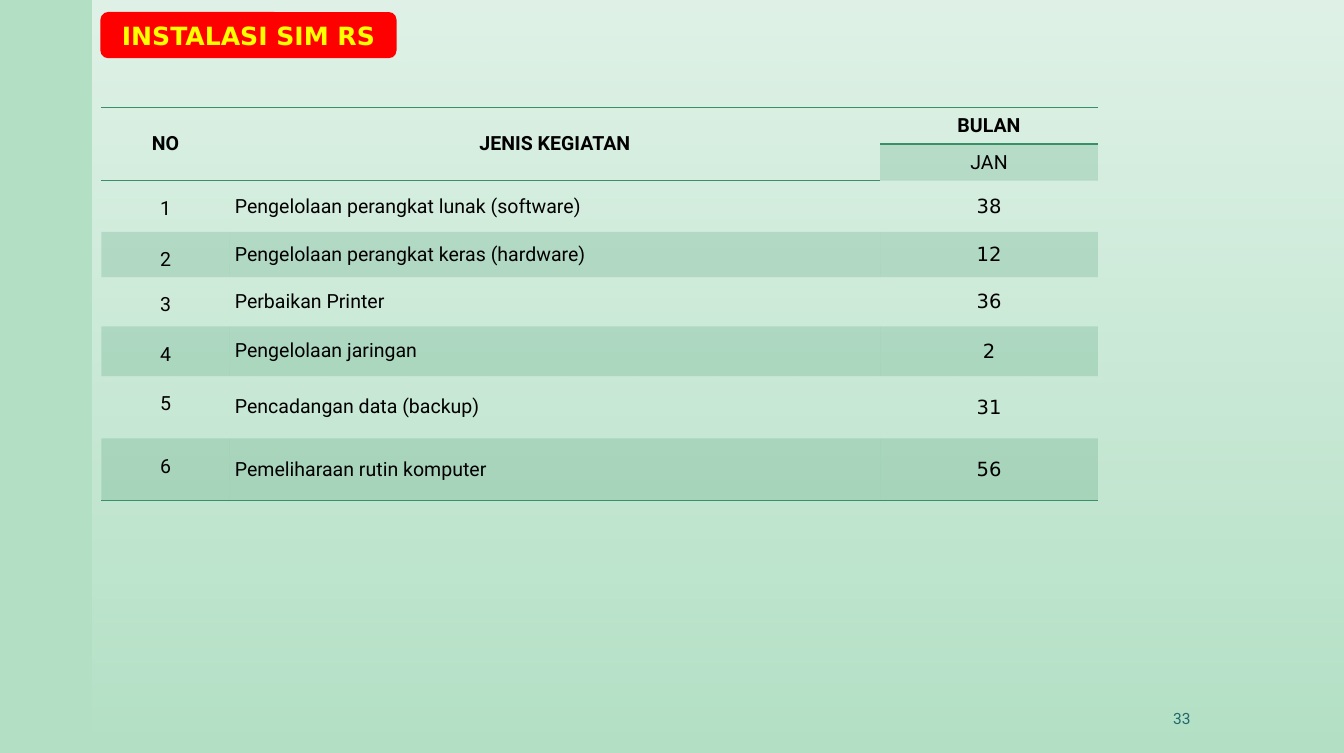
from dataclasses import dataclass

from lxml.etree import SubElement
from pptx import Presentation
from pptx.dml.color import RGBColor as RGB
from pptx.enum.shapes import MSO_SHAPE as Shape
from pptx.enum.text import MSO_ANCHOR as Anchor, PP_ALIGN as Align
from pptx.oxml.ns import qn
from pptx.util import Inches, Pt


@dataclass(frozen=True)
class Theme:
    mint: str = "B3E0C5"
    white: str = "FFFFFF"
    green: str = "389066"
    teal: str = "1F696F"
    red: str = "FF0000"
    yellow: str = "FFFF00"
    black: str = "000000"
    body_font: str = "Roboto"
    value_font: str = "DejaVu Sans"
    title_size: float = 18
    body_size: float = 14
    number_size: float = 11.1
    band_alpha: int = 20
    veil_alpha: int = 60


T = Theme()
W, H = Inches(13.39), Inches(7.5)
NO_STYLE = "{2D5ABB26-0587-4C30-8999-92F81FD0307C}"

# Table grid, in percent of the slide's width and height
COLS = (9.56, 48.39, 16.21)
ROWS = (4.87, 4.87, 6.8, 5.9, 6.55, 6.6, 8.27, 8.27)
ACTIVITIES = (
    ("Pengelolaan perangkat lunak (software)", 38),
    ("Pengelolaan perangkat keras (hardware)", 12),
    ("Perbaikan Printer", 36),
    ("Pengelolaan jaringan", 2),
    ("Pencadangan data (backup)", 31),
    ("Pemeliharaan rutin komputer", 56),
)


def x(percent):
    return round(W * percent / 100)


def y(percent):
    return round(H * percent / 100)


def box(left, top, width, height):
    return x(left), y(top), x(width), y(height)


def set_alpha(clr, percent):
    SubElement(clr, qn("a:alpha"), val=str(percent * 1000))


def write(tf, text, size, color, font=T.body_font, bold=False,
          align=Align.CENTER, spacing=None):
    p = tf.paragraphs[0]
    p.alignment = align
    if spacing:
        p.line_spacing = spacing
    r = p.add_run()
    r.text = text
    r.font.size, r.font.name, r.font.bold = Pt(size), font, bold
    r.font.color.rgb = RGB.from_string(color)


def add_panel(slide):
    """White veil that fades out towards the bottom."""
    sp = slide.shapes.add_shape(Shape.RECTANGLE, *box(6.87, 0, 93.13, 100))
    sp.shadow.inherit = False
    sp.line.fill.background()
    sp.fill.gradient()
    sp.fill.gradient_angle = 270
    for stop, alpha in zip(sp.fill.gradient_stops, (T.veil_alpha, 0)):
        stop.color.rgb = RGB.from_string(T.white)
    for clr, alpha in zip(sp._element.spPr.iter(qn("a:srgbClr")),
                          (T.veil_alpha, 0)):
        set_alpha(clr, alpha)


def add_badge(slide, text):
    sp = slide.shapes.add_shape(Shape.ROUNDED_RECTANGLE,
                                *box(7.47, 1.6, 22.03, 6.13))
    sp.shadow.inherit = False
    sp.fill.solid()
    sp.fill.fore_color.rgb = RGB.from_string(T.red)
    sp.line.fill.background()
    tf = sp.text_frame
    tf.word_wrap = True
    tf.vertical_anchor = Anchor.MIDDLE
    write(tf, text, T.title_size, T.yellow, T.value_font, bold=True)


def add_page_number(slide, text):
    tf = slide.shapes.add_textbox(*box(66.02, 92.67, 23.3, 5.33)).text_frame
    tf.word_wrap = True
    tf.vertical_anchor = Anchor.MIDDLE
    write(tf, text, T.number_size, T.teal, align=Align.RIGHT)


def style_cell(cell, banded=False, sides=""):
    """Set insets, band fill and the border lines named in sides (T, B)."""
    cell.margin_left = cell.margin_right = Inches(0.05)
    cell.margin_top = cell.margin_bottom = Inches(0.05)
    cell.vertical_anchor = Anchor.MIDDLE
    tcPr = cell._tc.get_or_add_tcPr()
    if banded:
        cell.fill.solid()
        cell.fill.fore_color.rgb = RGB.from_string(T.green)
        set_alpha(next(tcPr.iter(qn("a:srgbClr"))), T.band_alpha)
    else:
        cell.fill.background()
    for i, side in enumerate(sides):
        ln = SubElement(tcPr, qn(f"a:ln{side}"), w=str(Pt(1)))
        SubElement(SubElement(ln, qn("a:solidFill")), qn("a:srgbClr"),
                   val=T.green)
        tcPr.insert(i, ln)


def add_header(table):
    for c, text in enumerate(("NO", "JENIS KEGIATAN", "BULAN")):
        cell = table.cell(0, c)
        style_cell(cell, sides="TB")
        write(cell.text_frame, text, T.body_size, T.black, bold=True)
    for c in (0, 1):
        style_cell(table.cell(1, c), sides="B")
        table.cell(0, c).merge(table.cell(1, c))
    month = table.cell(1, 2)
    style_cell(month, banded=True)
    write(month.text_frame, "JAN", T.body_size, T.black)


def add_activity(table, number, name, count):
    row = number + 1
    last = number == len(ACTIVITIES)
    cells = [table.cell(row, c) for c in range(len(COLS))]
    for cell in cells:
        style_cell(cell, banded=number % 2 == 0, sides="B" if last else "")
    cells[0].vertical_anchor = Anchor.TOP
    no, label, value = (cell.text_frame for cell in cells)
    write(no, str(number), T.body_size, T.black, spacing=1.5)
    write(label, name, T.body_size, T.black, align=Align.LEFT)
    write(value, str(count), T.body_size, T.black, T.value_font)


def add_activity_table(slide):
    frame = slide.shapes.add_table(len(ROWS), len(COLS),
                                   *box(7.54, 14.27, sum(COLS), sum(ROWS)))
    table = frame.table
    table._tbl.tblPr.find(qn("a:tableStyleId")).text = NO_STYLE
    table.first_row = table.horz_banding = False
    for column, width in zip(table.columns, COLS):
        column.width = x(width)
    for row, height in zip(table.rows, ROWS):
        row.height = y(height)
    add_header(table)
    for number, (name, count) in enumerate(ACTIVITIES, 1):
        add_activity(table, number, name, count)


def main():
    prs = Presentation()
    prs.slide_width, prs.slide_height = W, H
    slide = prs.slides.add_slide(prs.slide_layouts[6])

    # Backdrop
    slide.background.fill.solid()
    slide.background.fill.fore_color.rgb = RGB.from_string(T.mint)
    add_panel(slide)

    # Content
    add_page_number(slide, "33")
    add_activity_table(slide)
    add_badge(slide, "INSTALASI SIM RS")
    prs.save("out.pptx")


if __name__ == "__main__":
    main()
